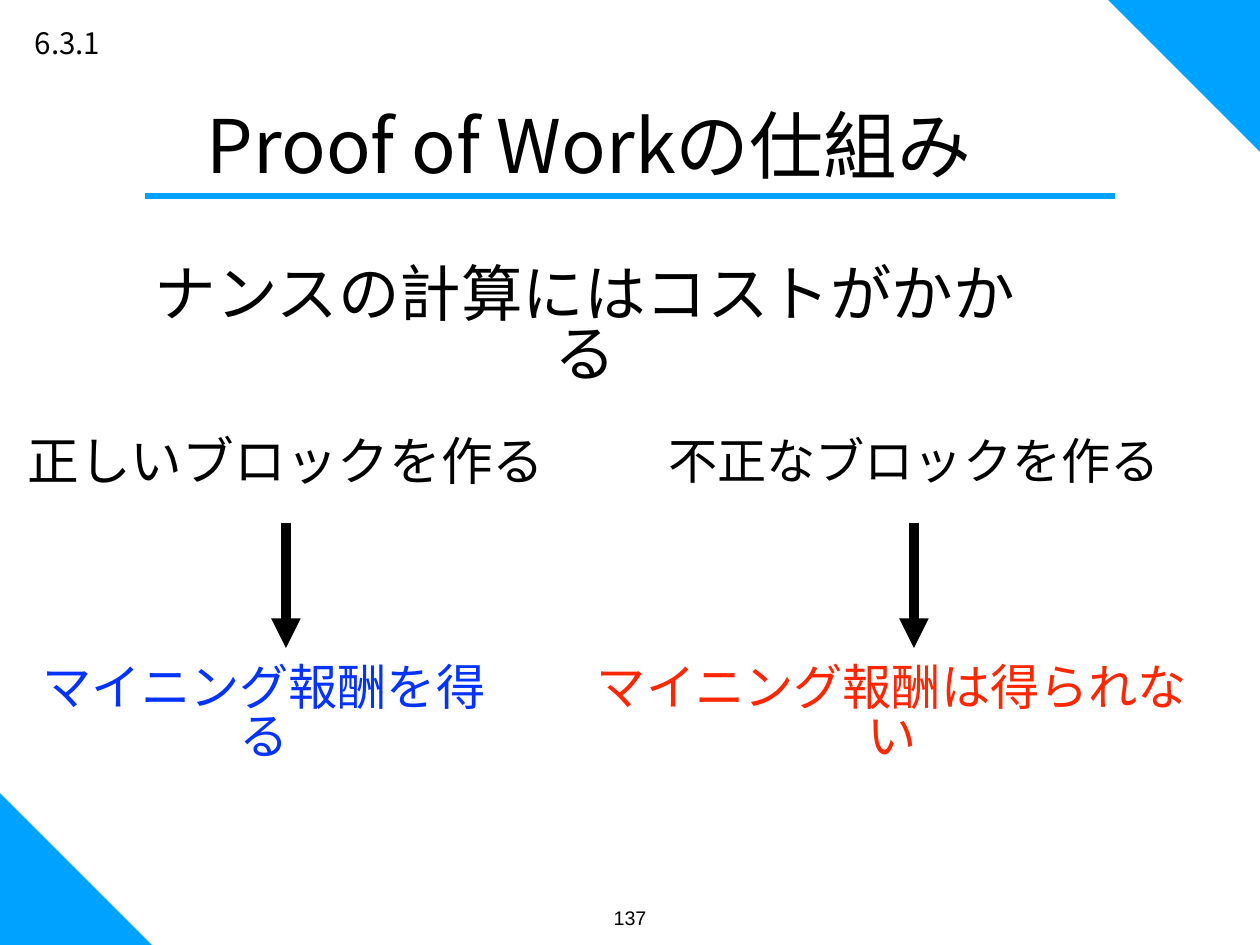
from pptx import Presentation, util as u
from pptx.dml.color import RGBColor
from pptx.enum import shapes, text
from pptx.oxml.ns import qn
from lxml import etree

PX = 10320
COLORS = {"accent": "00A2FF", "black": "000000", "reward": "0433FF", "no_reward": "FF2600"}
JAPANESE = "Noto Sans CJK JP"


def write(shape, box, wording, size, color="black", font=JAPANESE, spacing=1.0):
    """Place a shape by its px box and fill it with one centred paragraph."""
    shape.left, shape.top, shape.width, shape.height = [value * PX for value in box]
    frame = shape.text_frame
    frame_format = {
        "word_wrap": True,
        "auto_size": text.MSO_AUTO_SIZE.NONE,
        "vertical_anchor": text.MSO_ANCHOR.MIDDLE,
        **{f"margin_{side}": u.Inches(0.06) for side in ("left", "top", "right", "bottom")},
    }
    for name, value in frame_format.items():
        setattr(frame, name, value)
    paragraph = frame.paragraphs[0]
    paragraph.alignment = text.PP_ALIGN.CENTER
    paragraph.line_spacing = spacing
    paragraph.space_before = u.Pt(0)
    run = paragraph.add_run()
    run.text = wording
    run.font.size = u.Pt(size)
    run.font.color.rgb = RGBColor.from_string(COLORS[color])
    run.font.name = font
    etree.SubElement(run.font._element, qn("a:ea"), typeface=font)


def draw_line(start, end, color, width):
    points = [value * PX for value in (*start, *end)]
    line = slide.shapes.add_connector(shapes.MSO_CONNECTOR.STRAIGHT, *points)
    line.line.color.rgb = RGBColor.from_string(COLORS[color])
    line.line.width = u.Pt(width)
    etree.SubElement(line._element.spPr, qn("a:effectLst"))
    return line


presentation = Presentation()
presentation.slide_width = 1260 * PX
presentation.slide_height = 945 * PX
slide = presentation.slides.add_slide(presentation.slide_layouts[5])

# Corner triangles and title rule
corners = [
    [(0, 793), (0, 945), (152, 945)],
    [(1108, 0), (1260, 0), (1260, 152)],
]
for first, *others in corners:
    builder = slide.shapes.build_freeform(*first, scale=PX)
    builder.add_line_segments(others, close=True)
    corner = builder.convert_to_shape()
    corner.shadow.inherit = False
    corner.fill.solid()
    corner.fill.fore_color.rgb = RGBColor.from_string(COLORS["accent"])
    corner.line.fill.background()
draw_line((145, 196), (1115, 196), "accent", 5)

write(slide.shapes.title, (189, 102, 800, 83), "Proof of Work\u200bの仕組み".replace("\u200b", ""), 60)

# Section number, statement, the two cases with their results, page number
labels = [
    ((21, 23, 93, 39), "6.3.1", 24, {}),
    ((140, 251, 890, 156), "ナンスの計算にはコストがかかる", 50, {"spacing": 0.81}),
    ((14, 429, 544, 61), "正しいブロックを作る", 42, {}),
    ((642, 429, 544, 61), "不正なブロックを作る", 40, {}),
    ((32, 649, 464, 132), "マイニング報酬を得る", 40, {"color": "reward", "spacing": 0.84}),
    ((582, 649, 620, 132), "マイニング報酬は得られない", 40, {"color": "no_reward", "spacing": 0.84}),
    ((600, 902, 60, 31), "137", 16, {"font": "Arial"}),
]
for box, wording, size, options in labels:
    write(slide.shapes.add_textbox(0, 0, 0, 0), box, wording, size, **options)

# Arrows from each case to its result
for x in (286, 914):
    arrow = draw_line((x, 523), (x, 648), "black", 8)
    etree.SubElement(arrow.line._get_or_add_ln(), qn("a:tailEnd"), type="triangle")

presentation.save("out.pptx")
